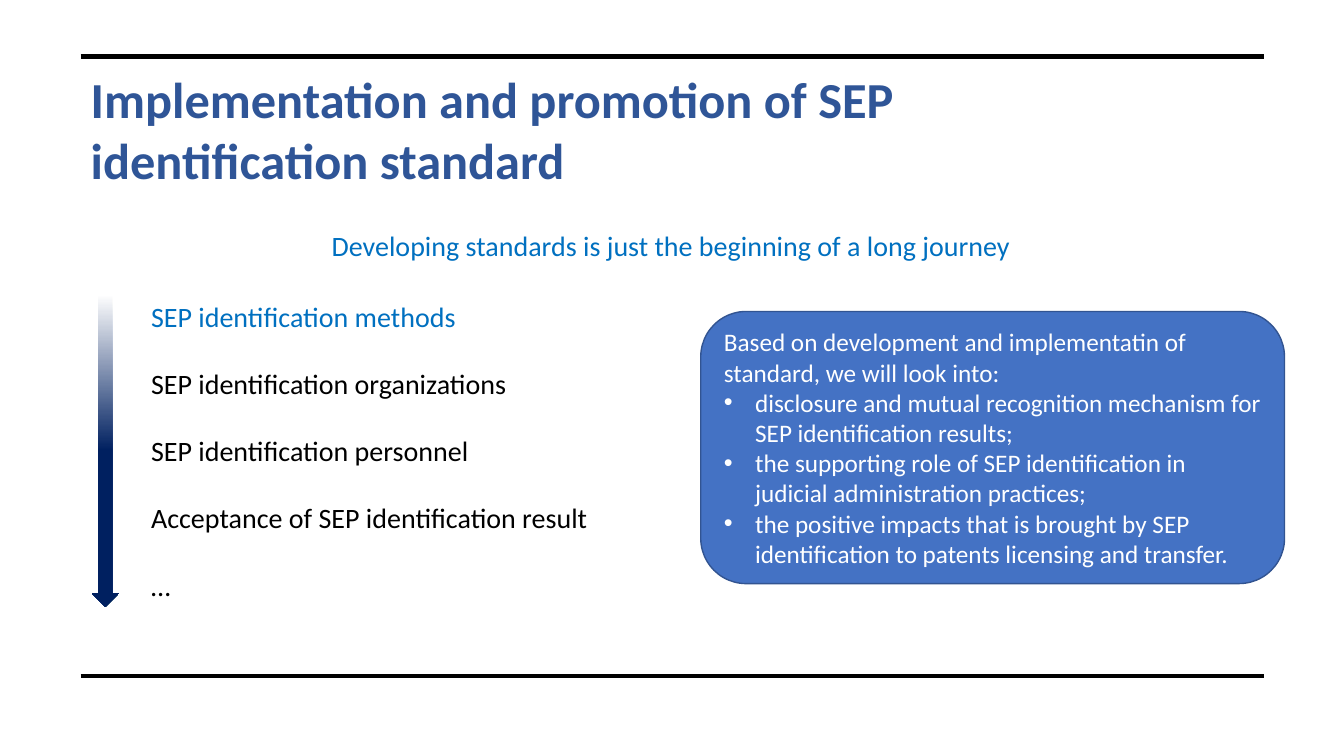
from pptx import Presentation
from pptx.dml.color import RGBColor
from pptx.enum.shapes import MSO_CONNECTOR, MSO_SHAPE
from pptx.enum.text import MSO_ANCHOR, MSO_AUTO_SIZE, PP_ALIGN
from pptx.oxml.ns import qn
from pptx.util import Inches, Pt
from lxml.etree import SubElement

# Content
TITLE = "Implementation and promotion of SEP identification standard"
SUBTITLE = "Developing standards is just the beginning of a long journey"
TOPICS = [
    "SEP identification methods",
    "SEP identification organizations",
    "SEP identification personnel",
    "Acceptance of SEP identification result",
    "…",
]
OUTLOOK_INTRO = "Based on development and implementatin of standard, we will look into:"
OUTLOOK_POINTS = [
    "disclosure and mutual recognition mechanism for SEP identification results;",
    "the supporting role of SEP identification in judicial administration practices;",
    "the positive impacts that is brought by SEP identification to patents licensing and transfer.",
]

FONT = "Calibri"
BLACK = RGBColor(0x00, 0x00, 0x00)
WHITE = RGBColor(0xFF, 0xFF, 0xFF)
TITLE_BLUE = RGBColor(0x2F, 0x55, 0x97)
ACCENT_BLUE = RGBColor(0x00, 0x70, 0xC0)
NAVY = RGBColor(0x00, 0x20, 0x60)
PANEL_BLUE = RGBColor(0x44, 0x72, 0xC4)
PANEL_EDGE = RGBColor(0x32, 0x54, 0x91)

RULE_LEFT, RULE_RIGHT = 0.8, 12.54
RULE_TOPS = (0.56, 6.71)


def box(left, top, width, height):
    return [Inches(v) for v in (left, top, width, height)]


def write(tf, lines, size, align=PP_ALIGN.LEFT, bold=False, gap=0):
    """Write one paragraph for each (text, colour) pair."""
    tf.word_wrap = True
    tf.auto_size = MSO_AUTO_SIZE.NONE
    for i, (text, color) in enumerate(lines):
        p = tf.add_paragraph() if i else tf.paragraphs[0]
        p.alignment = align
        p.space_after = Pt(gap)
        r = p.add_run()
        r.text = text
        r.font.name = FONT
        r.font.size = Pt(size)
        r.font.bold = bold
        r.font.color.rgb = color


def add_bullet(p):
    pPr = p._p.get_or_add_pPr()
    pPr.set("marL", str(Inches(0.31)))
    pPr.set("indent", str(-Inches(0.31)))
    SubElement(pPr, qn("a:buFont")).set("typeface", "Arial")
    SubElement(pPr, qn("a:buChar")).set("char", "•")


prs = Presentation()
prs.slide_width, prs.slide_height = Inches(13.33), Inches(7.5)
s = prs.slides.add_slide(prs.slide_layouts[5])

# Rules above and below the content
for y in RULE_TOPS:
    rule = s.shapes.add_connector(
        MSO_CONNECTOR.STRAIGHT, *box(RULE_LEFT, y, RULE_RIGHT, y))
    rule.line.color.rgb = BLACK
    rule.line.width = Pt(3)
    SubElement(rule._element.spPr, qn("a:effectLst"))

# Title
title = s.shapes.title
title.left, title.top, title.width, title.height = box(0.8, 0.63, 8.51, 1.31)
title.text_frame.vertical_anchor = MSO_ANCHOR.TOP
write(title.text_frame, [(TITLE, TITLE_BLUE)], 36, bold=True)

# Subtitle
sp = s.shapes.add_textbox(*box(0.79, 2.22, 11.73, 0.44))
write(sp.text_frame, [(SUBTITLE, ACCENT_BLUE)], 20, PP_ALIGN.CENTER)

# Topics, the first one highlighted
sp = s.shapes.add_textbox(*box(1.4, 2.92, 11.73, 3.13))
topic_lines = [(t, BLACK if i else ACCENT_BLUE) for i, t in enumerate(TOPICS)]
write(sp.text_frame, topic_lines, 20, gap=24)

# Arrow fading from white to navy over its upper half
arrow = s.shapes.add_shape(MSO_SHAPE.DOWN_ARROW, *box(0.91, 2.92, 0.27, 3.1))
arrow.shadow.inherit = False
arrow.line.fill.background()
arrow.fill.gradient()
arrow.fill.gradient_angle = 270
for stop, (position, color) in zip(arrow.fill.gradient_stops, [(0, WHITE), (0.5, NAVY)]):
    stop.position = position
    stop.color.rgb = color

# Outlook panel
panel = s.shapes.add_shape(MSO_SHAPE.ROUNDED_RECTANGLE, *box(6.95, 3.09, 5.79, 2.7))
panel.shadow.inherit = False
panel.fill.solid()
panel.fill.fore_color.rgb = PANEL_BLUE
panel.line.color.rgb = PANEL_EDGE
panel.line.width = Pt(1)
tf = panel.text_frame
tf.vertical_anchor = MSO_ANCHOR.MIDDLE
write(tf, [(text, WHITE) for text in [OUTLOOK_INTRO, *OUTLOOK_POINTS]], 18)
for p in tf.paragraphs[1:]:
    add_bullet(p)

prs.save("out.pptx")
